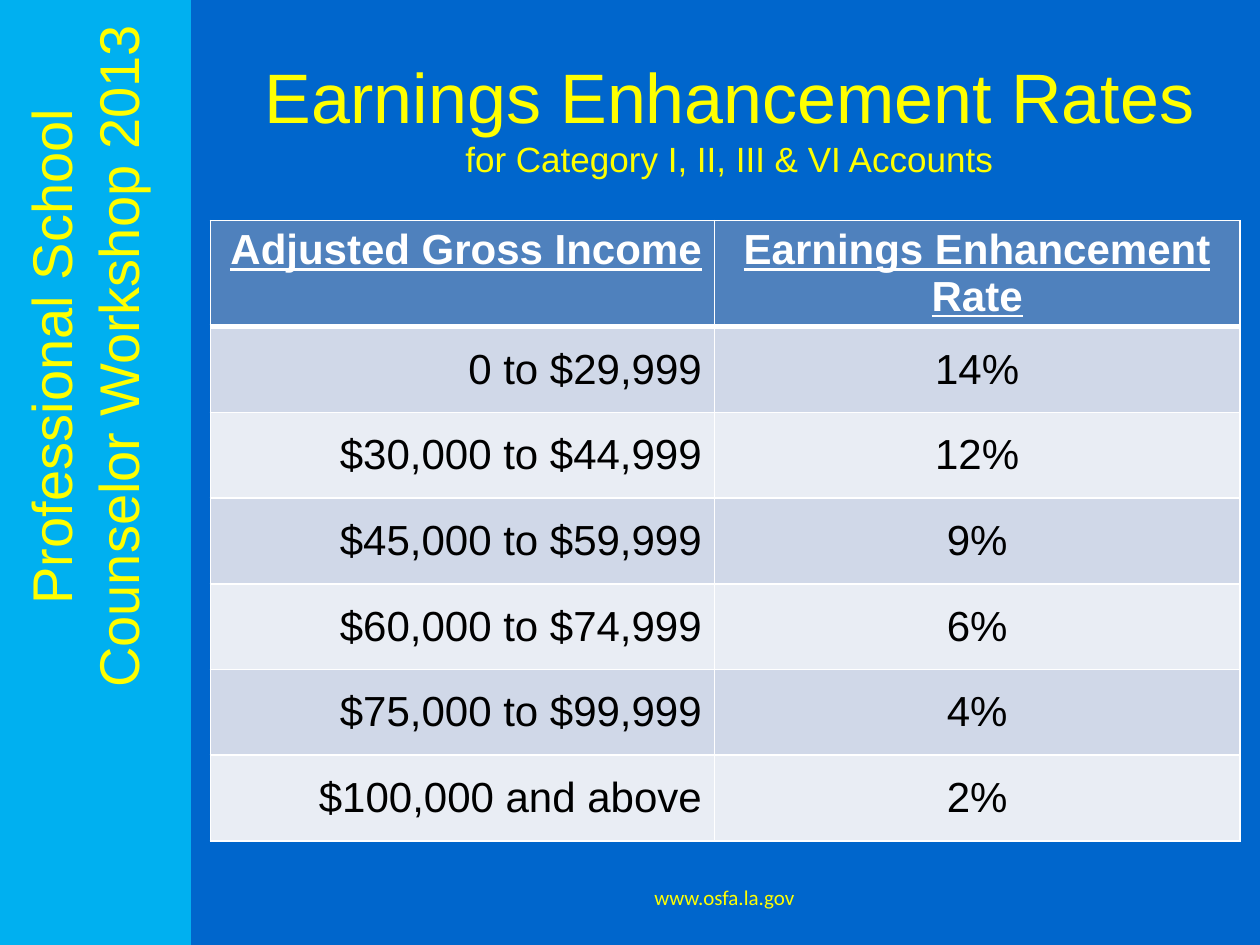
from dataclasses import dataclass

from lxml import etree
from pptx import Presentation
from pptx.dml.color import RGBColor
from pptx.enum.shapes import MSO_SHAPE
from pptx.enum.text import MSO_ANCHOR, MSO_AUTO_SIZE, PP_ALIGN
from pptx.oxml.ns import qn
from pptx.util import Inches, Pt

CENTER, RIGHT = PP_ALIGN.CENTER, PP_ALIGN.RIGHT
TOP, MIDDLE = MSO_ANCHOR.TOP, MSO_ANCHOR.MIDDLE
RECTANGLE = MSO_SHAPE.RECTANGLE
NO_AUTOFIT = MSO_AUTO_SIZE.NONE

BLUE, CYAN, YELLOW = "0066CC", "00B0F0", "FFFF00"
WHITE, BLACK = "FFFFFF", "000000"
HEADER_FILL, BANDS = "4F81BD", ("D0D8E8", "E9EDF4")
COLUMN_WIDTHS, ROW_HEIGHT = (4, 4.17), 0.68
COLUMN_ALIGNS = (RIGHT, CENTER)


@dataclass
class Bracket:
    income: str
    rate: str


HEADER = Bracket("Adjusted Gross Income", "Earnings Enhancement Rate")
BRACKETS = [
    Bracket("0 to $29,999", "14%"),
    Bracket("$30,000 to $44,999", "12%"),
    Bracket("$45,000 to $59,999", "9%"),
    Bracket("$60,000 to $74,999", "6%"),
    Bracket("$75,000 to $99,999", "4%"),
    Bracket("$100,000 and above", "2%"),
]


def color(value: str) -> RGBColor:
    return RGBColor.from_string(value)


def paint(fill, value: str) -> None:
    fill.solid()
    fill.fore_color.rgb = color(value)


def add_text(para, text: str, *, size: float, ink: str = YELLOW, font: str = "Arial",
             align=CENTER, heading: bool = False) -> None:
    para.alignment = align
    span = para.add_run()
    span.text = text
    span.font.name = font
    span.font.size = Pt(size)
    span.font.color.rgb = color(ink)
    span.font.bold = span.font.underline = heading


def add_box(page, left: float, top: float, width: float, height: float):
    """Add an empty wrapping text box and return its text frame."""
    box = page.shapes.add_textbox(Inches(left), Inches(top), Inches(width), Inches(height))
    box.text_frame.word_wrap = True
    return box.text_frame


def set_borders(cell, top: float, bottom: float) -> None:
    """Draw white cell borders, with widths in points; the sides are 1 point."""
    properties = cell._tc.get_or_add_tcPr()
    for tag, width in (("a:lnL", 1), ("a:lnR", 1), ("a:lnT", top), ("a:lnB", bottom)):
        line = etree.SubElement(properties, qn(tag), w=str(Pt(width)))
        fill = etree.SubElement(line, qn("a:solidFill"))
        etree.SubElement(fill, qn("a:srgbClr"), val=WHITE)


def add_sidebar(page) -> None:
    bar = page.shapes.add_shape(RECTANGLE, 0, 0, Inches(1.5), Inches(7.5))
    bar.shadow.inherit = False
    paint(bar.fill, CYAN)
    bar.line.color.rgb = color(CYAN)
    bar.line.width = Pt(2)

    frame = add_box(page, 0.08, 0.08, 1.28, 5.5)
    frame._txBody.bodyPr.set("vert", "vert270")
    add_text(frame.paragraphs[0], "Professional School Counselor Workshop 2013", size=32)


def add_title(page) -> None:
    title = page.shapes.title
    title.left, title.top = Inches(1.75), Inches(0.3)
    title.width, title.height = Inches(8.08), Inches(1.25)
    frame = title.text_frame
    frame.auto_size = NO_AUTOFIT
    frame.vertical_anchor = MIDDLE
    para = frame.paragraphs[0]
    add_text(para, "Earnings Enhancement Rates", size=40)
    para.add_line_break()
    add_text(para, "for Category I, II, III & VI Accounts", size=20)


def add_rate_table(page) -> None:
    rows = [HEADER, *BRACKETS]
    table = page.shapes.add_table(
        len(rows), len(COLUMN_WIDTHS), Inches(1.67), Inches(1.75),
        Inches(sum(COLUMN_WIDTHS)), Inches(ROW_HEIGHT * len(rows))).table
    for column, width in zip(table.columns, COLUMN_WIDTHS):
        column.width = Inches(width)
    for index, bracket in enumerate(rows):
        heading = index == 0
        table.rows[index].height = Inches(ROW_HEIGHT)
        texts = (bracket.income, bracket.rate)
        for cell, text, align in zip(table.rows[index].cells, texts, COLUMN_ALIGNS):
            set_borders(cell, top=3 if index == 1 else 1, bottom=3 if heading else 1)
            paint(cell.fill, HEADER_FILL if heading else BANDS[(index - 1) % 2])
            cell.vertical_anchor = TOP if heading else MIDDLE
            add_text(cell.text_frame.paragraphs[0], text, size=24,
                     ink=WHITE if heading else BLACK, align=align, heading=heading)


def add_footer(page) -> None:
    frame = add_box(page, 1.5, 6.92, 8.5, 0.4)
    frame.vertical_anchor = MIDDLE
    add_text(frame.paragraphs[0], "www.osfa.la.gov", size=12, font="Calibri")


def main() -> None:
    deck = Presentation()
    deck.slide_width, deck.slide_height = Inches(10), Inches(7.5)
    page = deck.slides.add_slide(deck.slide_layouts.get_by_name("Title Only"))
    paint(page.background.fill, BLUE)
    add_sidebar(page)
    add_title(page)
    add_rate_table(page)
    add_footer(page)
    deck.save("out.pptx")


if __name__ == "__main__":
    main()
